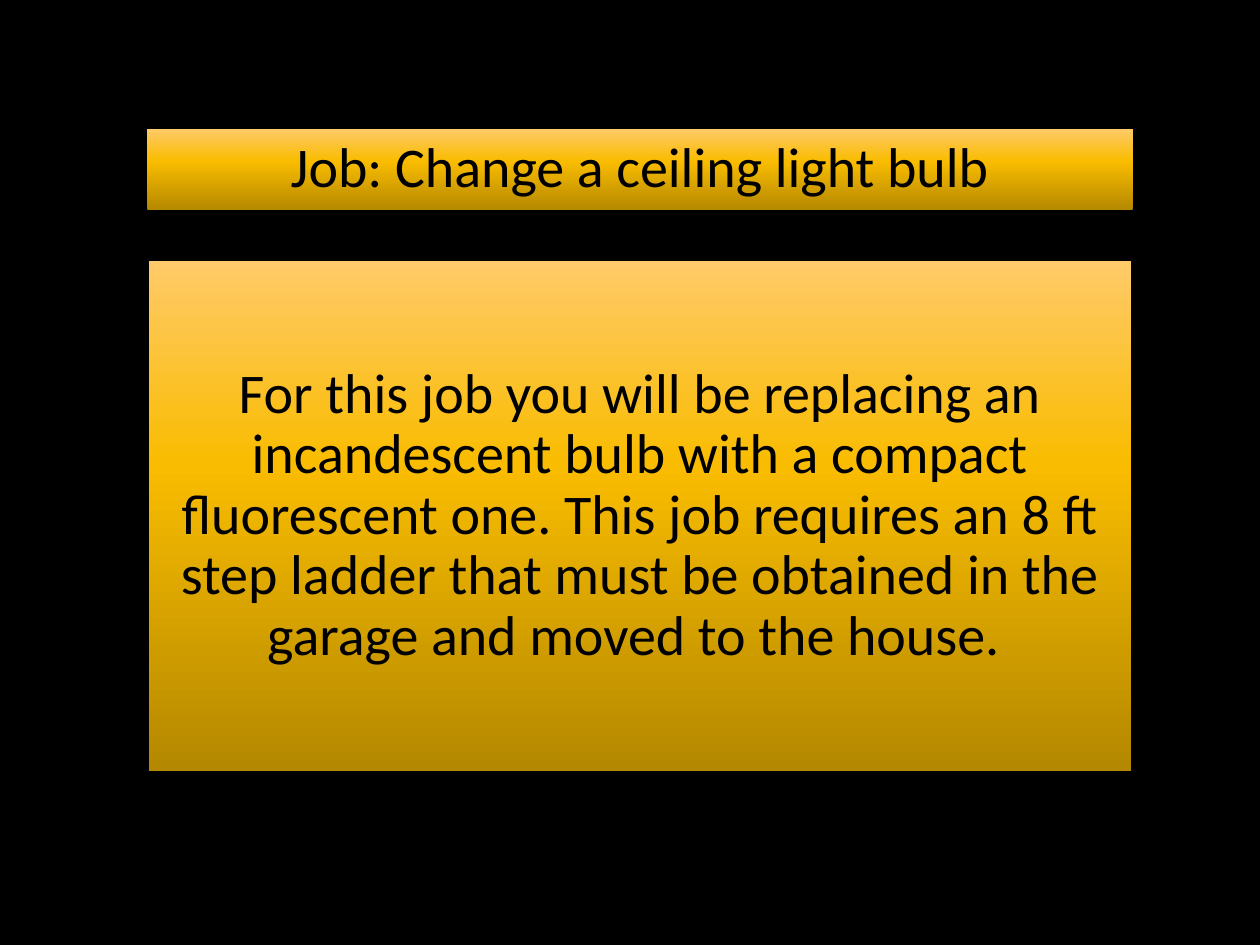
from copy import deepcopy
from dataclasses import dataclass

from pptx import Presentation
from pptx.dml.color import RGBColor
from pptx.enum.shapes import MSO_SHAPE
from pptx.enum.text import MSO_ANCHOR, PP_ALIGN
from pptx.util import Inches, Pt


@dataclass(frozen=True)
class Theme:
    black: RGBColor = RGBColor(0x00, 0x00, 0x00)
    gold: tuple = ((0, "B48800"), (0.6, "F9BC00"), (1, "FFCA69"))
    font: str = "Calibri"
    size: Pt = Pt(32)


theme = Theme()

prs = Presentation()
prs.slide_width, prs.slide_height = Inches(10), Inches(7.5)
s = prs.slides.add_slide(prs.slide_layouts[6])
s.background.fill.solid()
s.background.fill.fore_color.rgb = theme.black


def fill_gold(sp):
    """Fill a shape with the gold gradient, dark at the bottom."""
    sp.fill.gradient()
    sp.fill.gradient_angle = 90
    # A new gradient has two stops; add the third
    stops = sp.fill._fill._gradFill.gsLst
    stops.append(deepcopy(stops[-1]))
    for stop, (position, color) in zip(sp.fill.gradient_stops, theme.gold):
        stop.position = position
        stop.color.rgb = RGBColor.from_string(color)


# Job title and description panels
panels = [
    (1.17, 1.02, 7.82, 0.65, "Job: Change a ceiling light bulb"),
    (1.18, 2.07, 7.8, 4.05,
     "For this job you will be replacing an incandescent bulb with a compact "
     "fluorescent one. This job requires an 8 ft step ladder that must be "
     "obtained in the garage and moved to the house. "),
]
for left, top, width, height, text in panels:
    sp = s.shapes.add_shape(MSO_SHAPE.RECTANGLE, Inches(left), Inches(top),
                            Inches(width), Inches(height))
    sp.shadow.inherit = False
    sp.line.fill.background()
    fill_gold(sp)

    tf = sp.text_frame
    tf.word_wrap = True
    tf.vertical_anchor = MSO_ANCHOR.MIDDLE
    tf.margin_left = tf.margin_right = Inches(0.13)
    tf.margin_top = tf.margin_bottom = Inches(0.13)
    tf.text = text
    p = tf.paragraphs[0]
    p.alignment = PP_ALIGN.CENTER
    p.line_spacing = 0.9
    r = p.runs[0]
    r.font.name = theme.font
    r.font.size = theme.size
    r.font.color.rgb = theme.black

prs.save("out.pptx")
